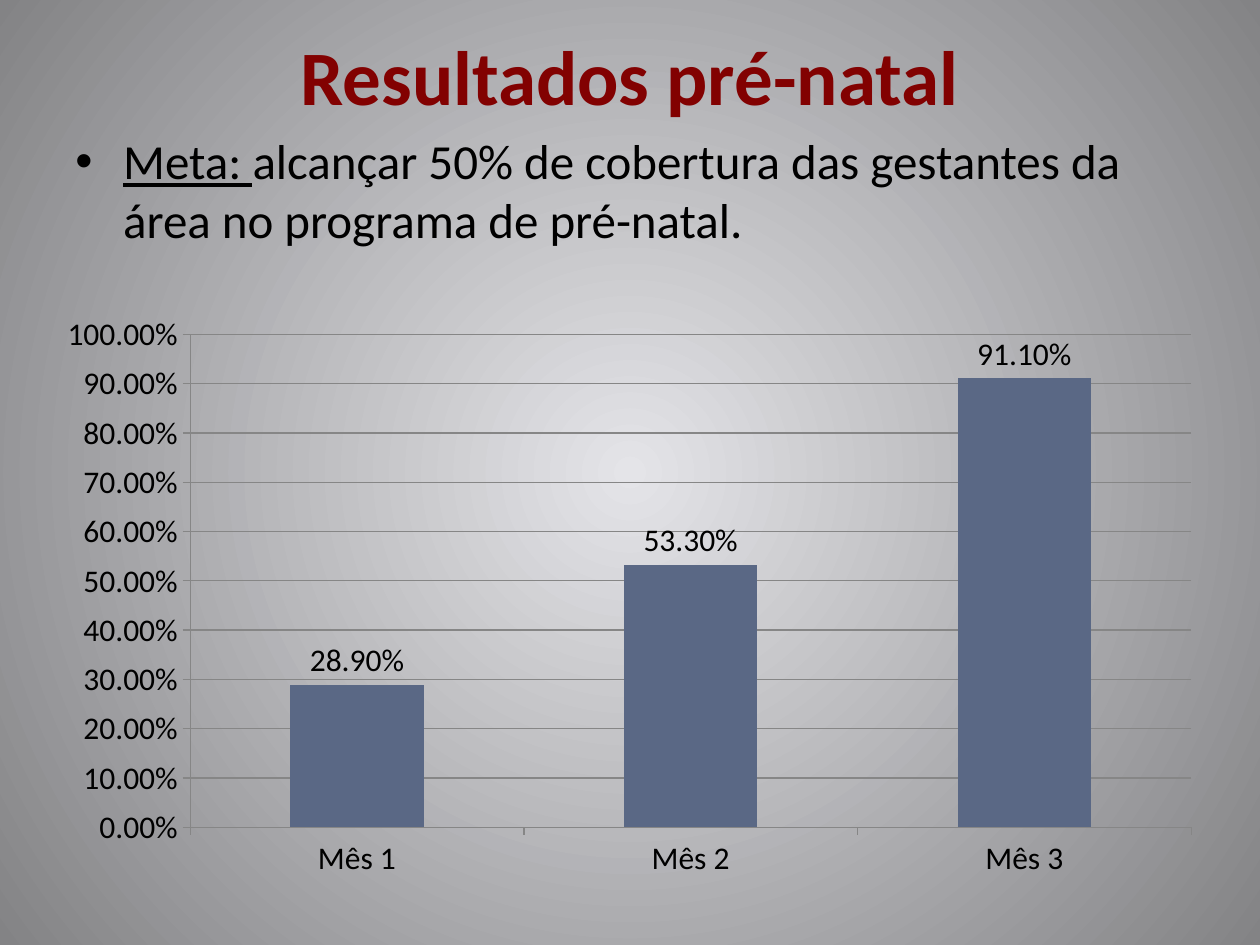
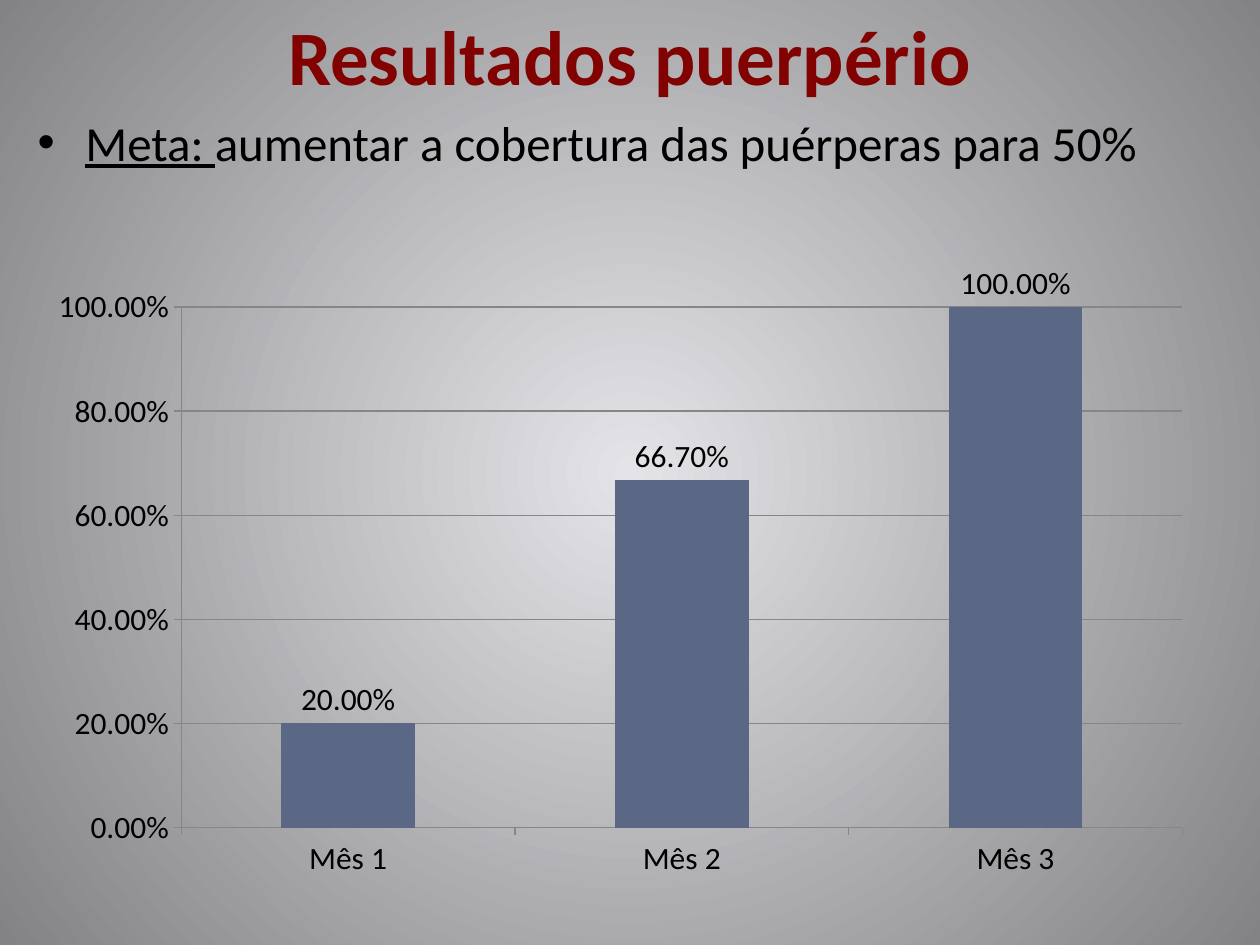
"""Build two result slides, each with a goal and a coverage column chart."""
from lxml import etree
from pptx import Presentation
from pptx.chart.data import CategoryChartData
from pptx.dml.color import RGBColor
from pptx.enum import chart as ch, text
from pptx.oxml.ns import qn
from pptx.util import Inches, Pt

FONT = "Calibri"
BLACK, TITLE_RED, BAR_BLUE, AXIS_GREY = "000000", "820101", "5A6885", "868686"
GLOW, EDGE = "E4E4E8", "838385"
PERCENT = "0.00%"
MONTHS = ["Mês 1", "Mês 2", "Mês 3"]

RESULTS = [
    {
        "title": "Resultados pré-natal",
        "title_at": (0.5, -0.03, 9, 1.25),
        "goal": "alcançar 50% de cobertura das gestantes da área no programa de pré-natal.",
        "goal_at": (0.5, 0.99, 9, 5.55),
        "coverage": (0.289, 0.533, 0.911),
        "chart_at": (0.35, 2.41, 9.29, 4.65),
        "step": 0.1,
    },
    {
        "title": "Resultados puerpério",
        "title_at": (0.5, -0.19, 9, 1.25),
        "goal": "aumentar a cobertura das puérperas para 50%",
        "goal_at": (0.2, 0.84, 9.45, 4.95),
        "coverage": (0.2, 0.667, 1),
        "chart_at": (0.28, 2.1, 9.29, 4.96),
        "step": 0.2,
    },
]


def color(value):
    return RGBColor.from_string(value)


def place(bounds):
    return [Inches(length) for length in bounds]


def style_font(font, size, value, bold=False):
    font.name, font.size, font.bold = FONT, Pt(size), bold
    font.color.rgb = color(value)


def paint_background(page):
    fill = page.background.fill
    fill.gradient()
    for stop, value in zip(fill.gradient_stops, (GLOW, EDGE)):
        stop.color.rgb = color(value)
    gradient = next(page.background._cSld.iter(qn("a:gradFill")))
    gradient.remove(gradient.find(qn("a:lin")))
    circle = etree.SubElement(gradient, qn("a:path"), path="circle")
    sides = dict.fromkeys("ltrb", "50000")
    etree.SubElement(circle, qn("a:fillToRect"), **sides)


def add_text(page, bounds, anchor):
    frame = page.shapes.add_textbox(*place(bounds)).text_frame
    frame.word_wrap = True
    frame.vertical_anchor = anchor
    return frame.paragraphs[0]


def add_title(page, title, bounds):
    para = add_text(page, bounds, text.MSO_ANCHOR.MIDDLE)
    para.text = title
    para.alignment = text.PP_ALIGN.CENTER
    style_font(para.font, 44, TITLE_RED, bold=True)


def add_goal(page, goal, bounds):
    para = add_text(page, bounds, text.MSO_ANCHOR.TOP)
    style_font(para.font, 28, BLACK)
    para.space_before = Pt(5.6)
    label = para.add_run()
    label.text = "Meta: "
    label.font.underline = True
    para.add_run().text = goal
    settings = para._p.get_or_add_pPr()
    settings.set("marL", str(Inches(0.38)))
    settings.set("indent", str(-Inches(0.38)))
    bullet_font = etree.Element(qn("a:buFont"), typeface="Arial")
    bullet = etree.Element(qn("a:buChar"), char="•")
    defaults = settings.find(qn("a:defRPr"))
    defaults.addprevious(bullet_font)
    defaults.addprevious(bullet)


def style_line(line):
    line.color.rgb = color(AXIS_GREY)
    line.width = Pt(0.75)


def add_coverage_chart(page, coverage, bounds, step):
    data = CategoryChartData(number_format=PERCENT)
    data.categories = MONTHS
    data.add_series("Series 1", coverage)
    kind = ch.XL_CHART_TYPE.COLUMN_CLUSTERED
    chart = page.shapes.add_chart(kind, *place(bounds), data).chart
    style_font(chart.font, 18, BLACK)
    chart.has_legend = chart.has_title = False

    plot = chart.plots[0]
    plot.gap_width = 150
    plot.vary_by_categories = False
    bars = plot.series[0].format.fill
    bars.solid()
    bars.fore_color.rgb = color(BAR_BLUE)
    plot.has_data_labels = True
    labels = plot.data_labels
    labels.show_value = True
    labels.number_format, labels.number_format_is_linked = PERCENT, False
    labels.position = ch.XL_LABEL_POSITION.OUTSIDE_END

    for axis in (chart.category_axis, chart.value_axis):
        axis.major_tick_mark = ch.XL_TICK_MARK.OUTSIDE
        axis.minor_tick_mark = ch.XL_TICK_MARK.NONE
        style_line(axis.format.line)
    scale = chart.value_axis
    scale.minimum_scale, scale.maximum_scale, scale.major_unit = 0, 1, step
    scale.has_major_gridlines = True
    style_line(scale.major_gridlines.format.line)
    scale.tick_labels.number_format = PERCENT
    scale.tick_labels.number_format_is_linked = False


def main():
    deck = Presentation()
    deck.slide_width, deck.slide_height = Inches(10), Inches(7.5)
    for result in RESULTS:
        page = deck.slides.add_slide(deck.slide_layouts[6])
        paint_background(page)
        add_title(page, result["title"], result["title_at"])
        add_goal(page, result["goal"], result["goal_at"])
        add_coverage_chart(page, result["coverage"], result["chart_at"], result["step"])
    deck.save("out.pptx")


if __name__ == "__main__":
    main()
